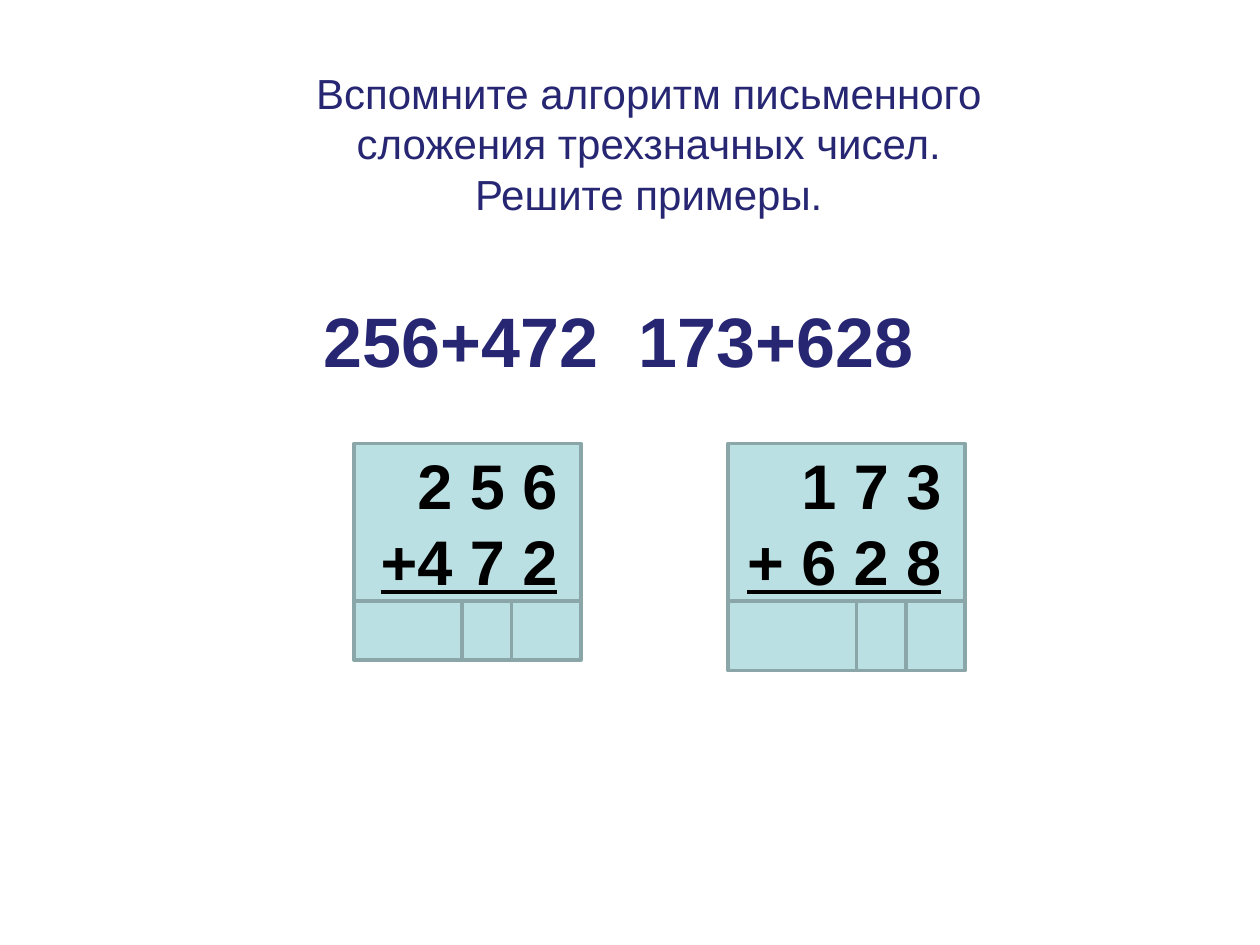
from dataclasses import dataclass

from lxml.etree import SubElement
from pptx import Presentation
from pptx.dml.color import RGBColor
from pptx.enum.shapes import MSO_SHAPE as Shape
from pptx.enum.text import MSO_ANCHOR as Anchor, MSO_AUTO_SIZE as AutoSize, PP_ALIGN as Align
from pptx.oxml.ns import qn
from pptx.util import Cm, Pt


@dataclass(frozen=True)
class Theme:
    font: str = "Arial"
    heading: RGBColor = RGBColor(0x26, 0x26, 0x73)
    digits: RGBColor = RGBColor(0, 0, 0)
    cell: RGBColor = RGBColor(0xBB, 0xE0, 0xE3)
    border: RGBColor = RGBColor(0x8A, 0xA6, 0xA8)
    border_width: float = 2
    title_size: int = 24
    body_size: int = 40
    sum_size: int = 36


class SlideBuilder:
    def __init__(self, slide, theme):
        self.slide = slide
        self.theme = theme

    def set_font(self, paragraph, size, color, bold=False):
        font = paragraph.font
        font.name = self.theme.font
        font.size = Pt(size)
        font.color.rgb = color
        font.bold = bold

    def place(self, placeholder, left, top, width, height):
        placeholder.left, placeholder.top = Cm(left), Cm(top)
        placeholder.width, placeholder.height = Cm(width), Cm(height)
        frame = placeholder.text_frame
        frame.word_wrap = True
        frame.auto_size = AutoSize.NONE
        return frame

    def title(self, text, *box):
        frame = self.place(self.slide.shapes.title, *box)
        frame.vertical_anchor = Anchor.MIDDLE
        frame.text = text
        paragraph = frame.paragraphs[0]
        paragraph.alignment = Align.CENTER
        self.set_font(paragraph, self.theme.title_size, self.theme.heading)

    def expressions(self, texts, indent, step, *box):
        """Write the expressions on one line, a tab stop every step."""
        frame = self.place(self.slide.placeholders[1], *box)
        frame.margin_left = Cm(indent)
        frame.margin_top = Cm(0.23)
        frame.text = "\t".join(texts)
        paragraph = frame.paragraphs[0]
        properties = paragraph._p.get_or_add_pPr()
        properties.set("marL", "0")
        properties.set("indent", "0")
        SubElement(properties, qn("a:buNone"))
        tabs = SubElement(properties, qn("a:tabLst"))
        for number in range(1, len(texts)):
            SubElement(tabs, qn("a:tab"), pos=str(Cm(number * step)), algn="l")
        paragraph.space_before = Pt(0)
        self.set_font(paragraph, self.theme.body_size, self.theme.heading, bold=True)

    def cell(self, left, top, width, height):
        shape = self.slide.shapes.add_shape(
            Shape.RECTANGLE, Cm(left), Cm(top), Cm(width), Cm(height))
        shape.shadow.inherit = False
        shape.fill.solid()
        shape.fill.fore_color.rgb = self.theme.cell
        shape.line.color.rgb = self.theme.border
        shape.line.width = Pt(self.theme.border_width)
        return shape

    def column_sum(self, addends, left, top, height, answer_widths, answer_height):
        """Draw the addends over a row of empty answer cells."""
        frame = self.cell(left, top, sum(answer_widths), height).text_frame
        frame.vertical_anchor = Anchor.MIDDLE
        frame.margin_right = Cm(0.47)
        frame.text = "\n".join(addends)
        for paragraph in frame.paragraphs:
            paragraph.alignment = Align.RIGHT
            self.set_font(paragraph, self.theme.sum_size, self.theme.digits, bold=True)
        frame.paragraphs[-1].font.underline = True
        for width in answer_widths:
            self.cell(left, top + height, width, answer_height)
            left += width


def main():
    presentation = Presentation()
    presentation.slide_width, presentation.slide_height = Cm(25.4), Cm(19.05)
    slide = presentation.slides.add_slide(presentation.slide_layouts[1])
    builder = SlideBuilder(slide, Theme())

    builder.title(
        "Вспомните алгоритм письменного сложения трехзначных чисел.\vРешите примеры.",
        4.75, 1.4, 16.66, 2.97)
    builder.expressions(["256+472", "173+628"], 2.16, 7.87, 4.37, 5.77, 19.76, 11.25)

    sums = [
        (["2 5 6", "+4 7 2"], 7.14, [2.18, 0.99, 1.4], 1.19),
        (["1 7 3", "+ 6 2 8"], 14.68, [2.59, 0.99, 1.19], 1.4),
    ]
    for addends, left, answer_widths, answer_height in sums:
        builder.column_sum(addends, left, 8.94, 3.18, answer_widths, answer_height)

    presentation.save("out.pptx")


if __name__ == "__main__":
    main()
